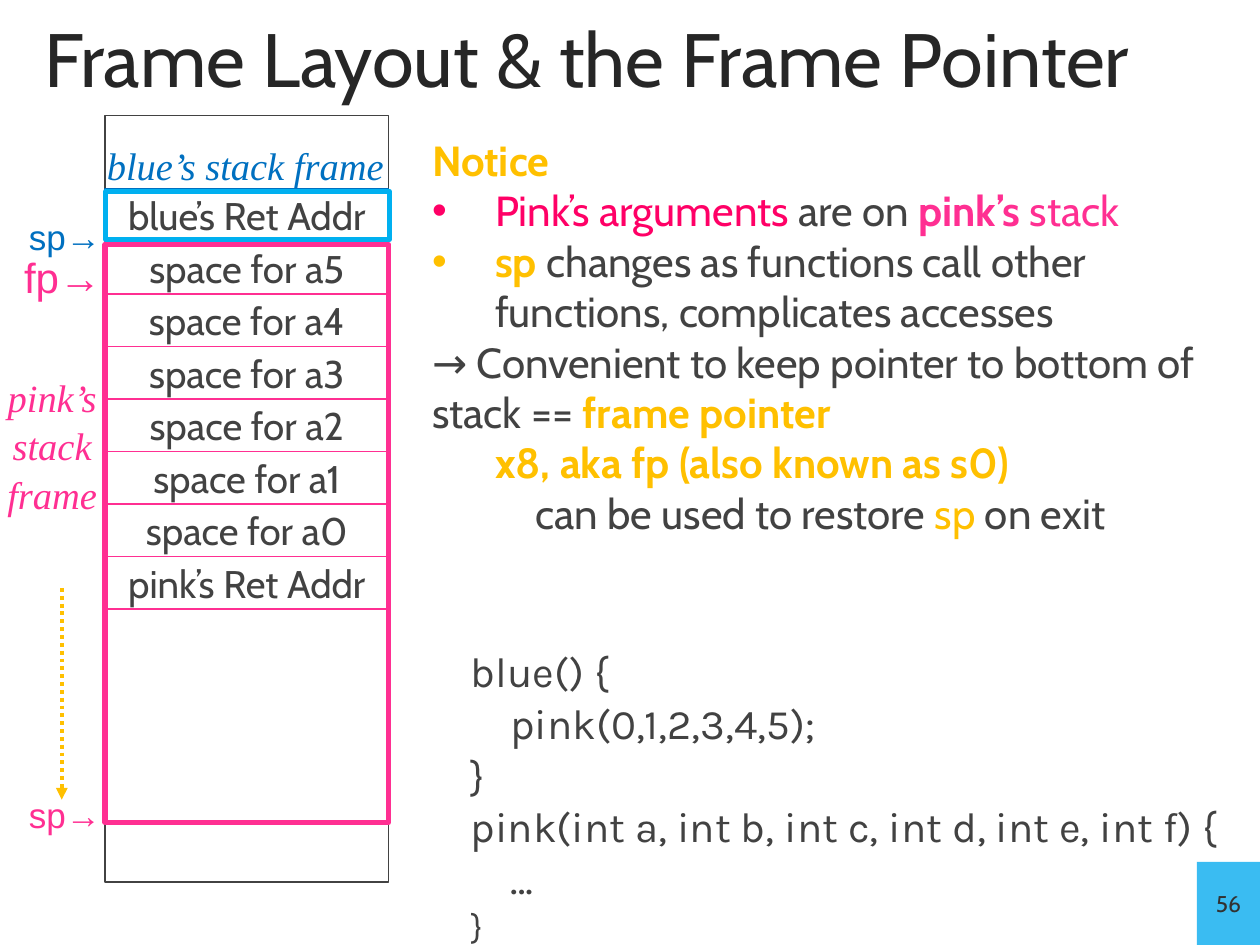
from dataclasses import dataclass
from typing import Optional

from lxml.etree import SubElement
from pptx import Presentation
from pptx.dml.color import RGBColor
from pptx.enum.dml import MSO_LINE
from pptx.enum.shapes import MSO_CONNECTOR, MSO_SHAPE
from pptx.enum.text import MSO_ANCHOR, PP_ALIGN
from pptx.oxml.ns import qn
from pptx.util import Pt


@dataclass(frozen=True)
class Theme:
    heading: str = "262626"
    body: str = "424242"
    pink: str = "FF2F92"
    rose: str = "FF0066"
    blue: str = "0070C0"
    sky: str = "00B0F0"
    gold: str = "FFC000"
    badge: str = "3ABCF2"
    badge_text: str = "323232"
    sans: str = "Cabin"
    serif: str = "Times New Roman"
    code: str = "Karla"
    pointer: str = "Arial"
    title_size: float = 43.2
    text_size: float = 24
    cell_size: float = 22
    small_size: float = 20
    badge_size: float = 13


THEME = Theme()


@dataclass(frozen=True)
class Box:
    left: float
    top: float
    width: float
    height: float

    def lengths(self) -> tuple:
        return Pt(self.left), Pt(self.top), Pt(self.width), Pt(self.height)


@dataclass(frozen=True)
class Run:
    text: str
    color: str = THEME.body
    size: float = THEME.text_size
    font: str = THEME.sans
    bold: bool = False
    italic: bool = False


@dataclass(frozen=True)
class Line:
    runs: tuple
    indent: float = 0
    bullet: bool = False
    align: PP_ALIGN = PP_ALIGN.LEFT
    spacing: float = 1.0


def write_lines(frame, lines: list) -> None:
    for index, line in enumerate(lines):
        paragraph = frame.paragraphs[0] if index == 0 else frame.add_paragraph()
        paragraph.alignment = line.align
        paragraph.line_spacing = line.spacing
        properties = paragraph._p.get_or_add_pPr()
        properties.set("marL", str(Pt(line.indent)))
        properties.set("indent", str(-Pt(line.indent) if line.bullet else 0))
        if line.bullet:
            SubElement(properties, qn("a:buFont"), typeface="Arial")
            SubElement(properties, qn("a:buChar"), char="•")
        else:
            SubElement(properties, qn("a:buNone"))
        for item in line.runs:
            run = paragraph.add_run()
            run.text = item.text
            font = run.font
            font.name, font.size = item.font, Pt(item.size)
            font.bold, font.italic = item.bold, item.italic
            font.color.rgb = RGBColor.from_string(item.color)


def add_text(slide, box: Box, lines: list) -> None:
    frame = slide.shapes.add_textbox(*box.lengths()).text_frame
    frame.word_wrap = True
    write_lines(frame, lines)


def add_rectangle(slide, box: Box, outline: Optional[str] = None, weight: float = 0.75,
                  fill: Optional[str] = None, label: Optional[Run] = None) -> None:
    shape = slide.shapes.add_shape(MSO_SHAPE.RECTANGLE, *box.lengths())
    shape.shadow.inherit = False
    if fill:
        shape.fill.solid()
        shape.fill.fore_color.rgb = RGBColor.from_string(fill)
    else:
        shape.fill.background()
    if outline:
        shape.line.color.rgb = RGBColor.from_string(outline)
        shape.line.width = Pt(weight)
    else:
        shape.line.fill.background()
    if label:
        frame = shape.text_frame
        frame.word_wrap = False
        frame.vertical_anchor = MSO_ANCHOR.MIDDLE
        write_lines(frame, [Line((label,), align=PP_ALIGN.CENTER)])


def add_growth_arrow(slide, x: float, top: float, bottom: float) -> None:
    connector = slide.shapes.add_connector(
        MSO_CONNECTOR.STRAIGHT, Pt(x), Pt(top), Pt(x), Pt(bottom))
    connector.line.color.rgb = RGBColor.from_string(THEME.gold)
    connector.line.width = Pt(2.25)
    connector.line.dash_style = MSO_LINE.ROUND_DOT
    SubElement(connector.line._get_or_add_ln(), qn("a:tailEnd"), type="triangle")
    SubElement(connector._element.spPr, qn("a:effectLst"))


def add_title(slide, text: str) -> None:
    title = slide.shapes.title
    title.left, title.top, title.width, title.height = Box(18, 12, 684, 42).lengths()
    title.text_frame.vertical_anchor = MSO_ANCHOR.MIDDLE
    write_lines(title.text_frame, [Line((Run(text, THEME.heading, THEME.title_size),))])


def add_stack(slide) -> None:
    left, width, first_row, row_height = 60, 162, 108, 30
    add_rectangle(slide, Box(left, 66, width, 438), THEME.body)
    labels = ["blue’s Ret Addr", *(f"space for a{n}" for n in range(5, -1, -1)),
              "pink’s Ret Addr"]
    for row, label in enumerate(labels):
        add_rectangle(slide, Box(left, first_row + row * row_height, width, row_height),
                      THEME.pink if row else THEME.blue,
                      label=Run(label, size=THEME.cell_size))
    add_rectangle(slide, Box(left + 0.5, 109.4, width, 27.4), THEME.sky, 3)
    add_rectangle(slide, Box(left, 139.6, width, 330.4), THEME.pink, 3)


def add_stack_labels(slide) -> None:
    for text, box, color, size in (
        ("sp→", Box(9.4, 119.5, 66, 32), THEME.blue, THEME.small_size),
        ("fp→", Box(6.7, 140.4, 66, 36), THEME.pink, THEME.text_size),
        ("sp→", Box(9.4, 450, 66, 32), THEME.pink, THEME.small_size),
    ):
        add_text(slide, box, [Line((Run(text, color, size, THEME.pointer),))])
    for text, box, color in (
        ("blue’s stack frame", Box(48, 76.3, 184.3, 34), THEME.blue),
        ("pink’s stack frame", Box(-20.2, 208.8, 100, 87), THEME.pink),
    ):
        run = Run(text, color, THEME.cell_size, THEME.serif, italic=True)
        add_text(slide, box, [Line((run,), align=PP_ALIGN.CENTER, spacing=1.05)])


def add_notes_on_frames(slide) -> None:
    gold = THEME.gold
    add_text(slide, Box(239.8, 73.4, 468.7, 239.8), [
        Line((Run("Notice", gold, bold=True),)),
        Line((Run("Pink’s arguments ", THEME.rose), Run("are on "),
              Run("pink’s", THEME.pink, bold=True), Run(" stack", THEME.pink)), 36, True),
        Line((Run("sp", gold, bold=True),
              Run(" changes as functions call other functions, complicates accesses")),
             36, True),
        Line((Run("→ Convenient to keep pointer to bottom of stack == "),
              Run("frame pointer", gold, bold=True))),
        Line((Run("x8, aka fp (also known as s0)", gold, bold=True),), 36),
        Line((Run("can be used to restore "), Run("sp", gold), Run(" on exit")), 59),
    ])


def add_code(slide) -> None:
    code_lines = (
        ("blue() {", 0, THEME.text_size),
        ("pink(0,1,2,3,4,5);", 22.5, THEME.text_size),
        ("}", 0, THEME.text_size),
        ("pink(int a, int b, int c, int d, int e, int f) {", 0, THEME.text_size),
        ("…", 22.5, THEME.text_size),
        ("}", 0, THEME.small_size),
    )
    add_text(slide, Box(262, 364.3, 451.4, 181.4), [
        Line((Run(text, size=size, font=THEME.code),), indent, spacing=1.03)
        for text, indent, size in code_lines])


def main() -> None:
    presentation = Presentation()
    presentation.slide_width, presentation.slide_height = Pt(720), Pt(540)
    slide = presentation.slides.add_slide(presentation.slide_layouts[5])
    add_rectangle(slide, Box(684, 492.5, 36, 47.5), fill=THEME.badge,
                  label=Run("56", THEME.badge_text, THEME.badge_size))
    add_title(slide, "Frame Layout & the Frame Pointer")
    add_stack(slide)
    add_growth_arrow(slide, 35.3, 336, 457)
    add_stack_labels(slide)
    add_code(slide)
    add_notes_on_frames(slide)
    presentation.save("out.pptx")


if __name__ == "__main__":
    main()
